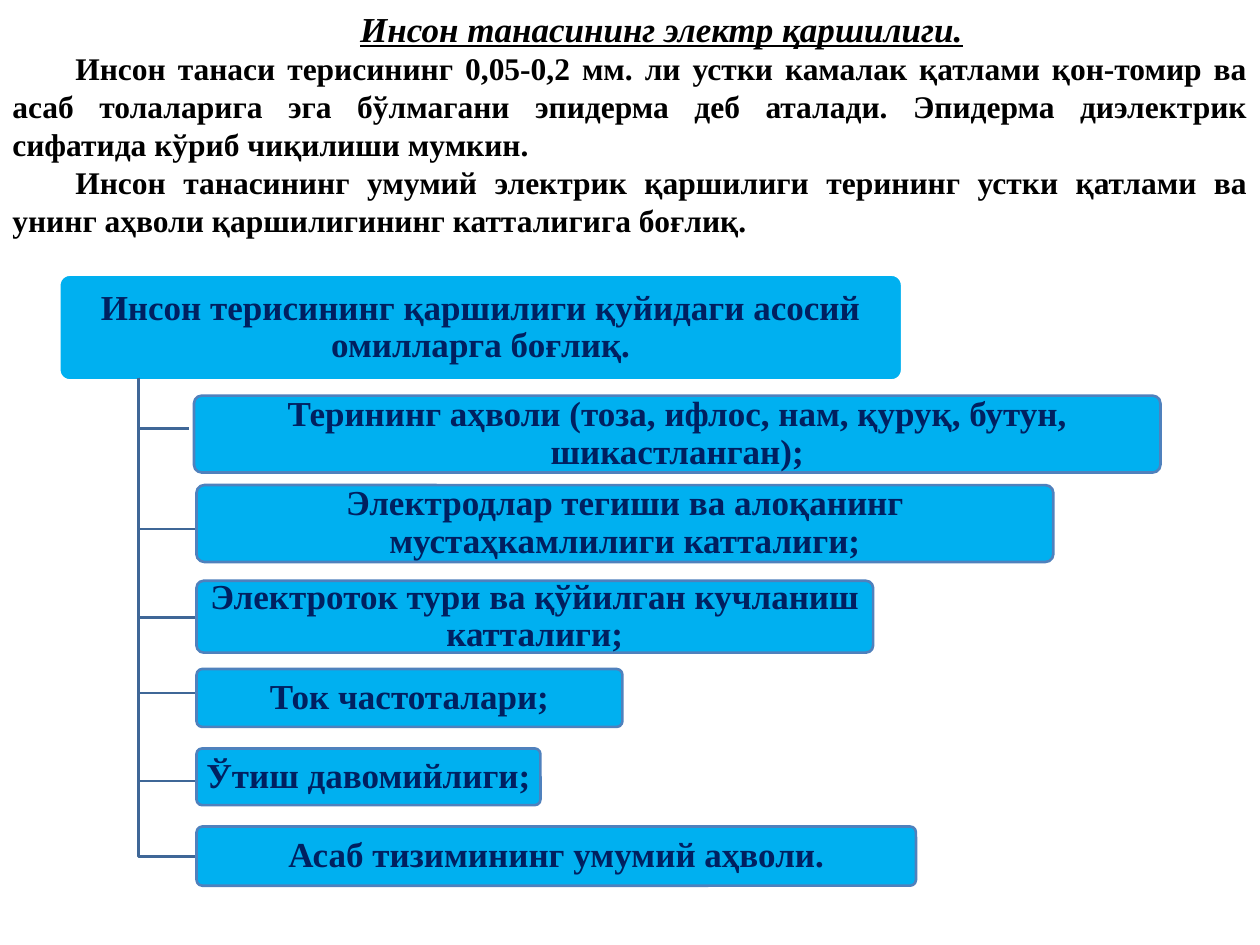
import pptx
import pptx.util
import pptx.dml.color
import pptx.enum.shapes
import pptx.enum.text

COLUMNS, ROWS = 100, 75
ALIGN = pptx.enum.text.PP_ALIGN


def color(hex_code):
    return pptx.dml.color.RGBColor.from_string(hex_code)


def write(paragraph, text, size=20, ink="000000", align=ALIGN.CENTER,
          italic=False, underline=False, spacing=1.0, indent=0):
    paragraph.alignment = align
    paragraph.line_spacing = spacing
    if indent:
        properties = paragraph._p.get_or_add_pPr()
        properties.set("marL", "0")
        properties.set("indent", str(pptx.util.Inches(indent)))
    run = paragraph.add_run()
    run.text = text
    font = run.font
    font.name = "Times New Roman"
    font.size = pptx.util.Pt(size)
    font.bold, font.italic, font.underline = True, italic, underline
    font.color.rgb = color(ink)


class Page:
    box_fill, box_ink, branch_line = "00B0F0", "002060", "3F6797"

    def __init__(self, deck):
        self.slide = deck.slides.add_slide(deck.slide_layouts[6])
        self.column = deck.slide_width / COLUMNS
        self.row = deck.slide_height / ROWS

    def place(self, left, top, width, height):
        return (round(left * self.column), round(top * self.row),
                round(width * self.column), round(height * self.row))

    def outline(self, shape, hex_code):
        shape.shadow.inherit = False
        shape.line.color.rgb = color(hex_code)
        shape.line.width = pptx.util.Pt(1.5)

    def prose(self, area, entries):
        frame = self.slide.shapes.add_textbox(*self.place(*area)).text_frame
        frame.word_wrap = True
        frame.auto_size = pptx.enum.text.MSO_AUTO_SIZE.SHAPE_TO_FIT_TEXT
        frame.vertical_anchor = pptx.enum.text.MSO_ANCHOR.MIDDLE
        for index, (text, style) in enumerate(entries):
            paragraph = frame.add_paragraph() if index else frame.paragraphs[0]
            write(paragraph, text, indent=0.5, **style)

    def box(self, area, text, border="4F81BD"):
        shape = self.slide.shapes.add_shape(
            pptx.enum.shapes.MSO_SHAPE.ROUNDED_RECTANGLE, *self.place(*area))
        shape.adjustments[0] = 0.1
        shape.fill.solid()
        shape.fill.fore_color.rgb = color(self.box_fill)
        self.outline(shape, border)
        frame = shape.text_frame
        frame.word_wrap = True
        frame.vertical_anchor = pptx.enum.text.MSO_ANCHOR.MIDDLE
        frame.margin_left = frame.margin_right = pptx.util.Inches(0.04)
        frame.margin_top = frame.margin_bottom = pptx.util.Inches(0.03)
        write(frame.paragraphs[0], text, ink=self.box_ink, spacing=0.9)

    def branch(self, trunk, start, left, middle):
        builder = self.slide.shapes.build_freeform(trunk, start, scale=(self.column, self.row))
        builder.add_line_segments([(trunk, middle), (left, middle)], close=False)
        elbow = builder.convert_to_shape()
        elbow.fill.background()
        self.outline(elbow, self.branch_line)


INTRODUCTION = [
    ("Инсон танасининг электр қаршилиги.", dict(italic=True, underline=True)),
    ("Инсон танаси терисининг 0,05-0,2 мм. ли устки камалак қатлами қон-томир ва "
     "асаб толаларига эга бўлмагани эпидерма деб аталади. Эпидерма диэлектрик "
     "сифатида кўриб чиқилиши мумкин.", dict(size=18, align=ALIGN.JUSTIFY)),
    ("Инсон танасининг умумий электрик қаршилиги терининг устки қатлами ва "
     "унинг аҳволи қаршилигининг катталигига боғлиқ.", dict(size=18, align=ALIGN.JUSTIFY)),
]

FACTORS = [
    ((15.4, 31.4, 76.7, 6.1), "Терининг аҳволи (тоза, ифлос, нам, қуруқ, бутун, шикастланган);"),
    ((15.6, 38.5, 68, 6.1), "Электродлар тегиши ва алоқанинг мустаҳкамлилиги катталиги;"),
    ((15.6, 46.1, 53.7, 5.7), "Электроток тури ва қўйилган кучланиш катталиги;"),
    ((15.6, 53.1, 33.8, 4.6), "Ток частоталари;"),
    ((15.6, 59.4, 27.3, 4.5), "Ўтиш давомийлиги;"),
    ((15.6, 65.6, 57.1, 4.7), "Асаб тизимининг умумий аҳволи."),
]


def main():
    deck = pptx.Presentation()
    deck.slide_width = pptx.util.Inches(10)
    deck.slide_height = pptx.util.Inches(7.5)
    page = Page(deck)
    page.prose((0, 0, 100, 19.5), INTRODUCTION)
    page.box((4.7, 21.8, 66.9, 8.4),
             "Инсон терисининг қаршилиги қуйидаги асосий омилларга боғлиқ.", border="FFFFFF")
    for area, factor in FACTORS:
        left, top, width, height = area
        page.branch(11.4, 30.1, left, top + height / 2)
        page.box(area, factor)
    deck.save("out.pptx")


if __name__ == "__main__":
    main()
